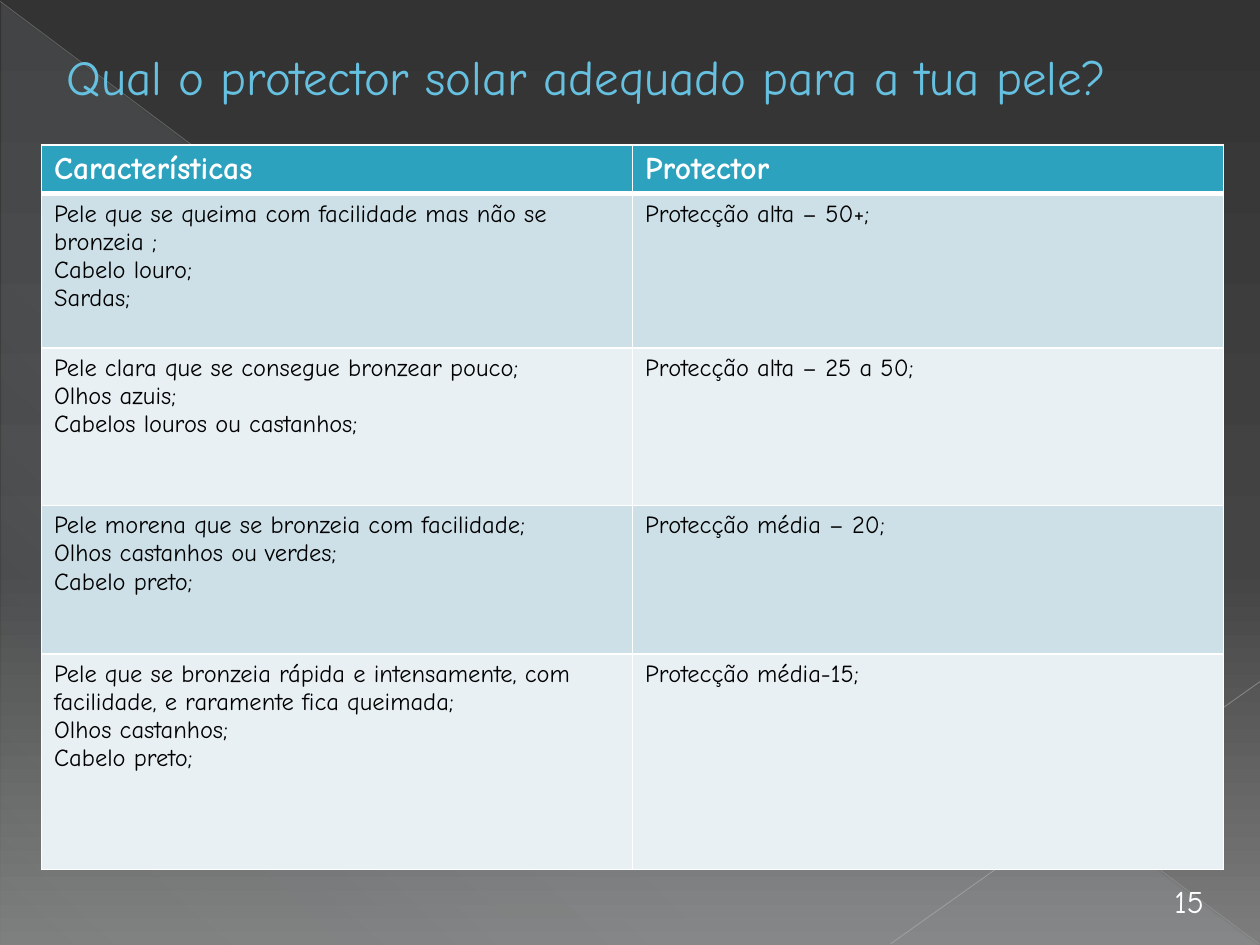
from lxml.etree import SubElement
from pptx import Presentation
from pptx.dml.color import RGBColor
from pptx.enum.shapes import MSO_CONNECTOR, MSO_SHAPE
from pptx.enum.text import MSO_ANCHOR, MSO_AUTO_SIZE, PP_ALIGN
from pptx.oxml.ns import qn
from pptx.util import Pt

FONT = "Comic Neue"
COLORS = {
    "top": "333333",
    "middle": "444444",
    "bottom": "7D7D7D",
    "glow": "DEF5FA",
    "long_line": "B9B9B9",
    "short_line": "C1C1C1",
    "title": "66C0E0",
    "title_outline": "1F7084",
    "header": "2DA2BF",
    "dark_band": "CDE0E8",
    "light_band": "E8F0F4",
    "white": "FFFFFF",
    "black": "000000",
}
HEADINGS = ("Características", "Protector")
SKIN_TYPES = [
    (["Pele que se queima com facilidade mas não se bronzeia ;", "Cabelo louro;", "Sardas;"],
     "Protecção alta – 50+;"),
    (["Pele clara que se consegue bronzear pouco;", "Olhos azuis;", "Cabelos louros ou castanhos;"],
     "Protecção alta – 25 a 50;"),
    (["Pele morena que se bronzeia com facilidade;", "Olhos castanhos ou verdes;", "Cabelo preto;"],
     "Protecção média – 20;"),
    (["Pele que se bronzeia rápida e intensamente, com facilidade, e raramente fica queimada;",
      "Olhos castanhos;", "Cabelo preto;"],
     "Protecção média-15;"),
]
ROW_HEIGHTS = (28, 88, 90, 85, 123)
COLUMN_WIDTH = 337.75


def rgb(name):
    return RGBColor.from_string(COLORS[name])


def add_color(parent, name, opacity=100):
    color = SubElement(parent, qn("a:srgbClr"), val=COLORS[name])
    if opacity < 100:
        SubElement(color, qn("a:alpha"), val=str(opacity * 1000))


def set_gradient(fill, owner, stops, angle):
    fill.gradient()
    gradient = owner.find(".//" + qn("a:gradFill"))
    for child in list(gradient):
        gradient.remove(child)
    stop_list = SubElement(gradient, qn("a:gsLst"))
    for position, name, opacity in stops:
        stop = SubElement(stop_list, qn("a:gs"), pos=str(position * 1000))
        add_color(stop, name, opacity)
    SubElement(gradient, qn("a:lin"), ang=str(angle * 60000), scaled="0")


def format_paragraph(para, size, color, bold=False):
    para.alignment = PP_ALIGN.LEFT
    para.font.name = FONT
    para.font.size = Pt(size)
    para.font.bold = bold
    para.font.color.rgb = rgb(color)


def add_line(page, start, end, color, width, opacity):
    line = page.shapes.add_connector(
        MSO_CONNECTOR.STRAIGHT, *(Pt(value) for value in start + end))
    line.line.width = Pt(width)
    line.line.color.rgb = rgb(color)
    properties = line.element.spPr
    SubElement(properties.find(".//" + qn("a:srgbClr")), qn("a:alpha"), val=str(opacity * 1000))
    SubElement(properties, qn("a:effectLst"))


def add_backdrop(page):
    set_gradient(page.background.fill, page.element,
                 [(0, "top", 100), (60, "middle", 100), (100, "bottom", 100)], 90)
    triangle = page.shapes.add_shape(
        MSO_SHAPE.RIGHT_TRIANGLE, Pt(0.72), Pt(1.44), Pt(718.56), Pt(538.56))
    triangle.shadow.inherit = False
    triangle.line.fill.background()
    set_gradient(triangle.fill, triangle.element,
                 [(0, "glow", 10), (70, "glow", 8), (100, "glow", 1)], 133)
    add_line(page, (0, 0.72), (719.28, 539.28), "long_line", 0.39, 35)
    add_line(page, (720, 389.5), (509, 539.28), "short_line", 0.47, 45)


def add_title(page, text):
    title = page.shapes.title
    page.shapes.element.append(title.element)
    title.left, title.top, title.width, title.height = Pt(-7.2), Pt(-11.5), Pt(648), Pt(110)
    frame = title.text_frame
    frame.word_wrap = True
    frame.auto_size = MSO_AUTO_SIZE.NONE
    frame.vertical_anchor = MSO_ANCHOR.MIDDLE
    para = frame.paragraphs[0]
    span = para.add_run()
    span.text = text
    format_paragraph(para, 28, "title")
    properties = para._p.get_or_add_pPr()
    properties.set("marL", str(Pt(38)))
    properties.set("indent", "0")
    outline = SubElement(span._r.get_or_add_rPr(), qn("a:ln"), w=str(Pt(0.5)))
    add_color(SubElement(outline, qn("a:solidFill")), "title_outline")


def add_border(cell, side, width):
    border = SubElement(cell._tc.get_or_add_tcPr(), qn("a:" + side), w=str(Pt(width)))
    add_color(SubElement(border, qn("a:solidFill")), "white")


def fill_cell(cell, lines, row):
    is_header = row == 0
    widths = {"lnL": 1, "lnR": 1, "lnT": 3 if row == 1 else 1, "lnB": 3 if is_header else 1}
    for side, width in widths.items():
        add_border(cell, side, width)
    band = "header" if is_header else "dark_band" if row % 2 else "light_band"
    cell.fill.solid()
    cell.fill.fore_color.rgb = rgb(band)
    cell.text_frame.text = "\n".join(lines)
    for para in cell.text_frame.paragraphs:
        if is_header:
            format_paragraph(para, 18, "white", bold=True)
        else:
            format_paragraph(para, 14, "black")


def add_skin_table(page):
    rows = [([HEADINGS[0]], HEADINGS[1])] + SKIN_TYPES
    table = page.shapes.add_table(
        len(rows), len(HEADINGS), Pt(23.75), Pt(82.75),
        Pt(COLUMN_WIDTH * len(HEADINGS)), Pt(sum(ROW_HEIGHTS))).table
    table.first_row = False
    table.horz_banding = False
    for column in table.columns:
        column.width = Pt(COLUMN_WIDTH)
    for index, (features, protection) in enumerate(rows):
        table.rows[index].height = Pt(ROW_HEIGHTS[index])
        fill_cell(table.cell(index, 0), features, index)
        fill_cell(table.cell(index, 1), [protection], index)


def add_page_number(page, number):
    box = page.shapes.add_textbox(Pt(664), Pt(500.5), Pt(39.5), Pt(29))
    frame = box.text_frame
    frame.word_wrap = True
    frame.auto_size = MSO_AUTO_SIZE.SHAPE_TO_FIT_TEXT
    frame.text = number
    format_paragraph(frame.paragraphs[0], 18, "white")


def main():
    deck = Presentation()
    deck.slide_width, deck.slide_height = Pt(720), Pt(540)
    page = deck.slides.add_slide(deck.slide_layouts.get_by_name("Title Only"))
    add_backdrop(page)
    add_title(page, "Qual o protector solar adequado para a tua pele?")
    add_skin_table(page)
    add_page_number(page, "15")
    deck.save("out.pptx")


if __name__ == "__main__":
    main()
